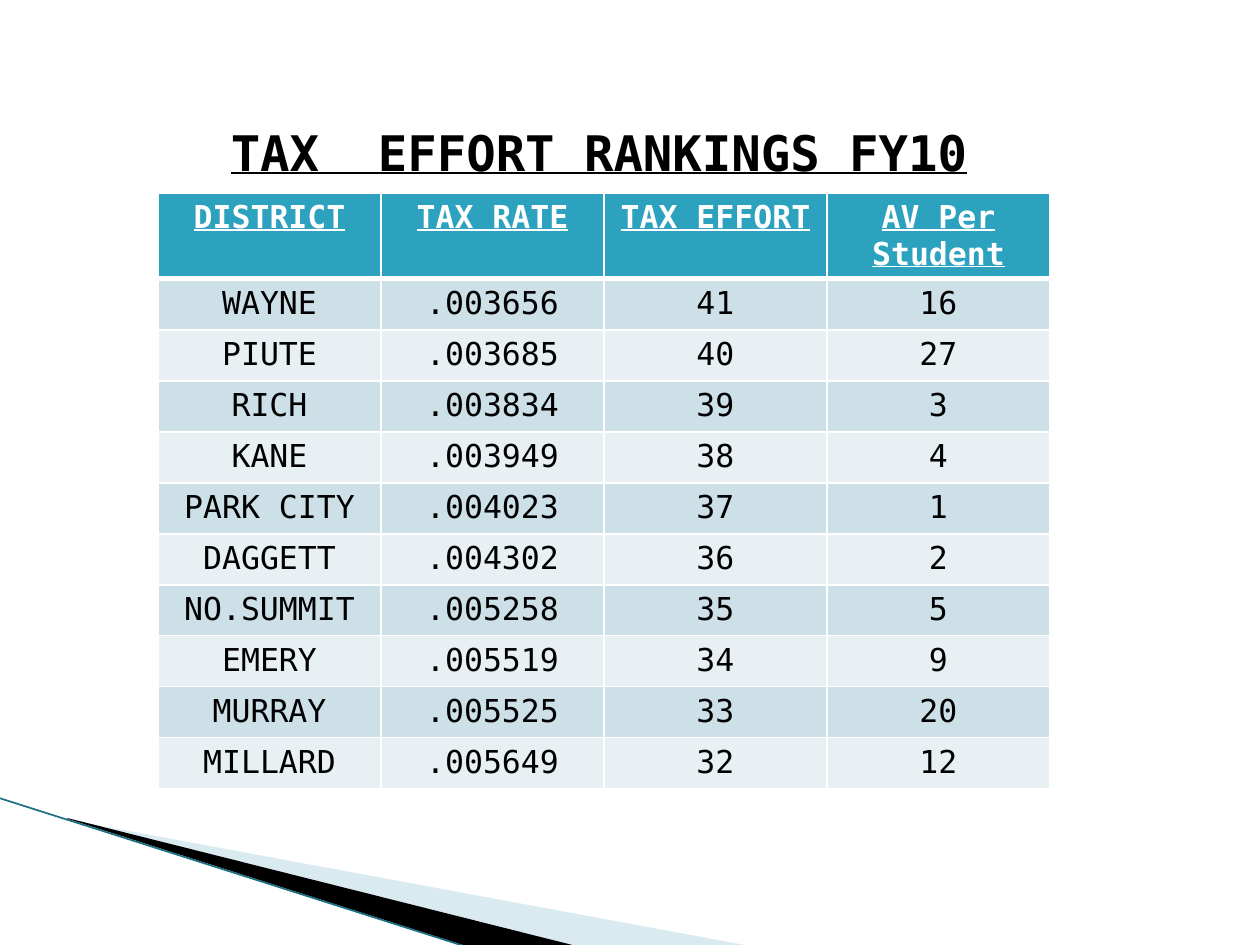
from lxml import etree
from pptx import Presentation
from pptx import util as u
from pptx.dml.color import RGBColor
from pptx.enum import shapes, text
from pptx.oxml.ns import qn

SCALE = 914400 / 126  # EMU per px
FONT = "DejaVu Sans Mono"
HUES = {
    "white": "FFFFFF", "black": "000000", "head": "2DA2BF",
    "odd": "CDE0E8", "even": "E8F0F4", "pale": "A0CBDC", "edge": "1B6F83",
}


def emu(px):
    return u.Emu(round(px * SCALE))


def rgb(hue):
    return RGBColor.from_string(HUES[hue])


class Deck:
    def __init__(self, wide, high):
        self.prs = Presentation()
        self.prs.slide_width, self.prs.slide_height = emu(wide), emu(high)
        self.slide = self.prs.slides.add_slide(self.prs.slide_layouts[6])

    def style(self, frame, size, hue, strong):
        para = frame.paragraphs[0]
        para.alignment = text.PP_ALIGN.CENTER
        for run in para.runs:
            font = run.font
            font.name, font.size = FONT, u.Pt(size)
            font.bold = font.underline = strong
            font.color.rgb = rgb(hue)

    def wedge(self, points, hue, alpha=100):
        pen = self.slide.shapes.build_freeform(*points[0], scale=SCALE)
        pen.add_line_segments(points[1:], close=True)
        shape = pen.convert_to_shape()
        shape.shadow.inherit = False
        shape.line.fill.background()
        shape.fill.solid()
        shape.fill.fore_color.rgb = rgb(hue)
        if alpha < 100:
            tint = shape.fill._xPr.find(".//" + qn("a:srgbClr"))
            etree.SubElement(tint, qn("a:alpha"), val=str(alpha * 1000))

    def line(self, start, end, hue, width):
        ends = [emu(v) for v in (*start, *end)]
        link = self.slide.shapes.add_connector(shapes.MSO_CONNECTOR.STRAIGHT, *ends)
        link.line.color.rgb = rgb(hue)
        link.line.width = u.Pt(width)
        etree.SubElement(link._element.spPr, qn("a:effectLst"))

    def title(self, words, left, top, wide, high, size):
        box = self.slide.shapes.add_textbox(*map(emu, (left, top, wide, high)))
        frame = box.text_frame
        frame.word_wrap = True
        frame.text = words
        self.style(frame, size, "black", True)

    def border(self, cell, row):
        props = cell._tc.get_or_add_tcPr()
        thick = {"lnT": row == 1, "lnB": row == 0}
        for side in ("lnL", "lnR", "lnT", "lnB"):
            width = u.Pt(3 if thick.get(side) else 1)
            edge = etree.SubElement(props, qn("a:" + side), w=str(width))
            fill = etree.SubElement(edge, qn("a:solidFill"))
            etree.SubElement(fill, qn("a:srgbClr"), val=HUES["white"])

    def table(self, rows, left, top, col, head, high, size):
        count = len(rows[0])
        area = (left, top, col * count, head + high * (len(rows) - 1))
        grid = self.slide.shapes.add_table(len(rows), count, *map(emu, area)).table
        for column in grid.columns:
            column.width = emu(col)
        for r, row in enumerate(rows):
            grid.rows[r].height = emu(head if r == 0 else high)
            fill = "head" if r == 0 else "odd" if r % 2 else "even"
            for c, words in enumerate(row):
                cell = grid.cell(r, c)
                self.border(cell, r)
                cell.fill.solid()
                cell.fill.fore_color.rgb = rgb(fill)
                cell.text_frame.text = words
                self.style(cell.text_frame, size, "black" if r else "white", r == 0)


RANKS = [
    ("DISTRICT", "TAX RATE", "TAX EFFORT", "AV Per Student"),
    ("WAYNE", ".003656", "41", "16"),
    ("PIUTE", ".003685", "40", "27"),
    ("RICH", ".003834", "39", "3"),
    ("KANE", ".003949", "38", "4"),
    ("PARK CITY", ".004023", "37", "1"),
    ("DAGGETT", ".004302", "36", "2"),
    ("NO.SUMMIT", ".005258", "35", "5"),
    ("EMERY", ".005519", "34", "9"),
    ("MURRAY", ".005525", "33", "20"),
    ("MILLARD", ".005649", "32", "12"),
]


def main():
    deck = Deck(1260, 945)

    # Corner sweep
    deck.wedge([(69, 820), (750, 946), (575, 946), (69, 819)], "pale", 40)
    deck.wedge([(67, 818), (576, 946), (469, 947), (68, 819)], "black")
    deck.line((-1, 798), (467, 947), "edge", 0.95)

    # Rankings table
    deck.table(RANKS, left=158, top=193, col=223, head=85, high=51, size=18)

    # Title
    deck.title("TAX  EFFORT RANKINGS FY10", 179, 116, 840, 72, size=28)

    deck.prs.save("out.pptx")


if __name__ == "__main__":
    main()
